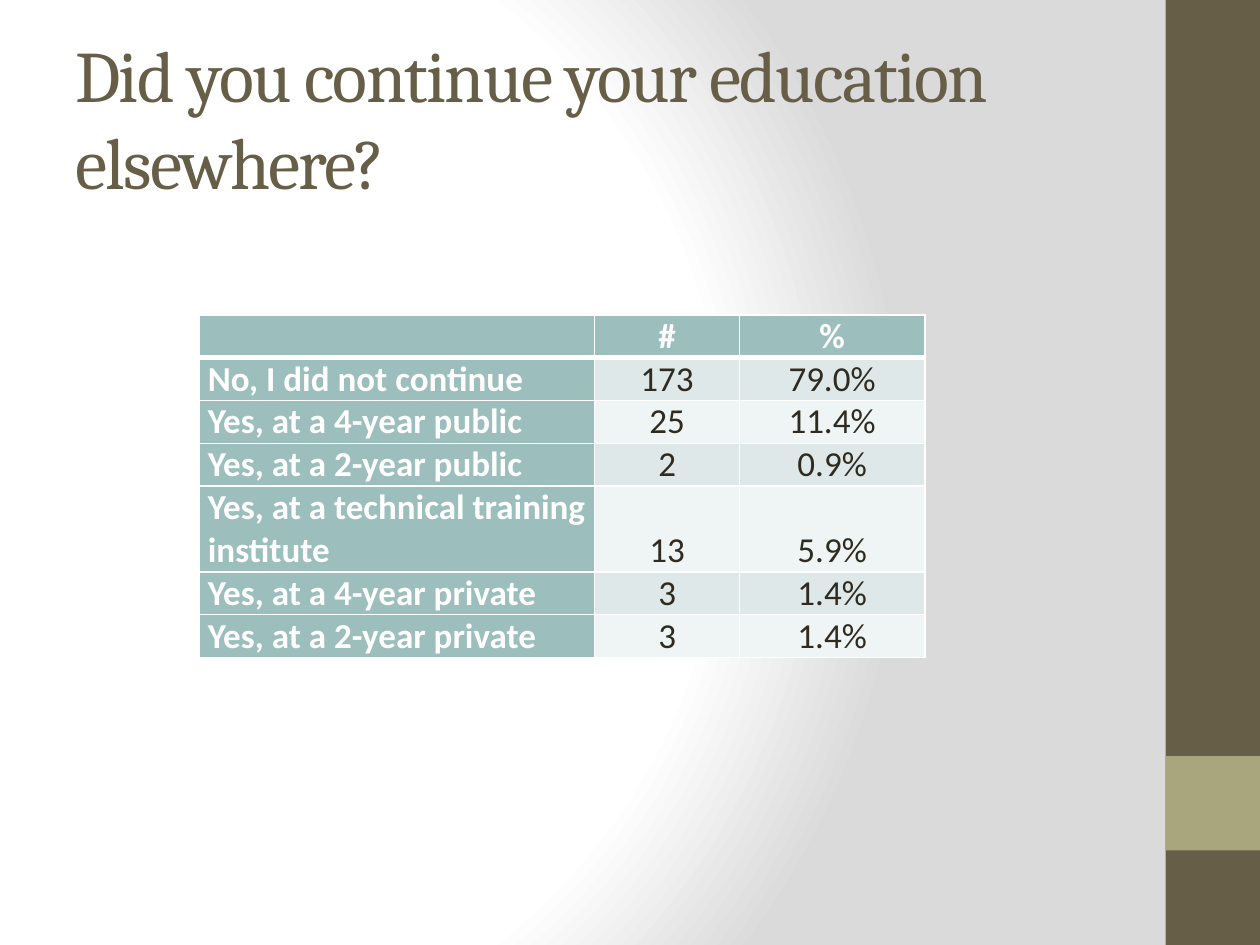
from lxml import etree
from pptx import Presentation
from pptx import util as u
from pptx.dml.color import RGBColor
from pptx.enum import shapes, text
from pptx.oxml import parse_xml
from pptx.oxml.ns import nsdecls, qn

WIDTH, HEIGHT = u.Inches(10), u.Inches(7.5)
BROWN, OLIVE, TEAL, WHITE, INK = "675E47", "A9A57C", "9CBEBD", "FFFFFF", "2F2B20"
BANDS = ("DEE8E8", "EFF4F4")

ANSWERS = [
    ("", "#", "%"),
    ("No, I did not continue", "173", "79.0%"),
    ("Yes, at a 4-year public", "25", "11.4%"),
    ("Yes, at a 2-year public", "2", "0.9%"),
    ("Yes, at a technical training institute", "13", "5.9%"),
    ("Yes, at a 4-year private", "3", "1.4%"),
    ("Yes, at a 2-year private", "3", "1.4%"),
]
COLUMN_WIDTHS = (3.14, 1.15, 1.47)
LINE_HEIGHT = 0.34
TWO_LINE_ROW = 4


def rgb(value):
    return RGBColor.from_string(value)


def share(left, top, width, height):
    """Turn shares of the slide into a box of lengths."""
    return (int(left * WIDTH), int(top * HEIGHT), int(width * WIDTH), int(height * HEIGHT))


def apply(target, values):
    for name, value in values.items():
        setattr(target, name, value)


def paint_background(slide):
    slide.background.fill.gradient()
    linear = slide.element.find(".//" + qn("a:gradFill"))
    stops = "".join(
        f'<a:gs pos="{pos * 1000}"><a:srgbClr val="{color}"/></a:gs>'
        for pos, color in ((0, WHITE), (75, WHITE), (100, "DADADA"))
    )
    radial = parse_xml(
        f'<a:gradFill {nsdecls("a")} rotWithShape="1"><a:gsLst>{stops}</a:gsLst>'
        '<a:path path="circle"><a:fillToRect l="20000" t="50000" r="100000" b="50000"/>'
        "</a:path></a:gradFill>"
    )
    linear.getparent().replace(linear, radial)


def add_side_band(slide, box):
    left, top, width, height = box
    accent = (left, top + int(height * 0.8), width, height // 10)
    for area, color in ((box, BROWN), (accent, OLIVE)):
        block = slide.shapes.add_shape(shapes.MSO_SHAPE.RECTANGLE, *area)
        block.shadow.inherit = False
        block.fill.solid()
        block.fill.fore_color.rgb = rgb(color)
        block.line.fill.background()


def add_title(slide, box, wording):
    frame = slide.shapes.add_textbox(*box).text_frame
    apply(frame, {"word_wrap": True, "vertical_anchor": text.MSO_ANCHOR.MIDDLE})
    run = frame.paragraphs[0].add_run()
    run.text = wording
    apply(run.font, {"name": "Cambria", "size": u.Pt(41.4)})
    run.font.color.rgb = rgb(BROWN)
    run.font._element.set("spc", "-100")


def set_borders(cell, top, bottom):
    """Draw white cell borders; top and bottom are widths in points."""
    properties = cell._tc.get_or_add_tcPr()
    for side, width in (("L", 1), ("R", 1), ("T", top), ("B", bottom)):
        line = etree.SubElement(properties, qn(f"a:ln{side}"), w=str(u.Pt(width)))
        fill = etree.SubElement(line, qn("a:solidFill"))
        etree.SubElement(fill, qn("a:srgbClr"), val=WHITE)


def fill_cell(cell, wording, row, column):
    heading = row == 0 or column == 0
    set_borders(cell, 3 if row == 1 else 1, 3 if row == 0 else 1)
    cell.fill.solid()
    cell.fill.fore_color.rgb = rgb(TEAL if heading else BANDS[(row - 1) % 2])
    apply(cell, {
        "margin_left": u.Inches(0.07), "margin_right": u.Inches(0.07),
        "margin_top": 0, "margin_bottom": 0,
        "vertical_anchor": text.MSO_ANCHOR.BOTTOM,
    })
    cell.text = wording
    paragraph = cell.text_frame.paragraphs[0]
    paragraph.alignment = text.PP_ALIGN.CENTER if column else text.PP_ALIGN.LEFT
    for run in paragraph.runs:
        apply(run.font, {"name": "Calibri", "size": u.Pt(20), "bold": heading})
        run.font.color.rgb = rgb(WHITE if heading else INK)


def add_answers(slide, box):
    table = slide.shapes.add_table(len(ANSWERS), len(COLUMN_WIDTHS), *box).table
    for column, width in zip(table.columns, COLUMN_WIDTHS):
        column.width = u.Inches(width)
    for row, answer in enumerate(ANSWERS):
        lines = 2 if row == TWO_LINE_ROW else 1
        table.rows[row].height = u.Inches(LINE_HEIGHT * lines)
        for column, wording in enumerate(answer):
            fill_cell(table.cell(row, column), wording, row, column)


def main():
    deck = Presentation()
    apply(deck, {"slide_width": WIDTH, "slide_height": HEIGHT})
    slide = deck.slides.add_slide(deck.slide_layouts[6])
    paint_background(slide)
    add_side_band(slide, share(0.925, 0, 0.075, 1))
    add_title(slide, share(0.05, 0.04, 0.833, 1 / 6),
              "Did you continue your education elsewhere?")
    add_answers(slide, share(0.158, 1 / 3, 0.576, 0.363))
    deck.save("out.pptx")


if __name__ == "__main__":
    main()
